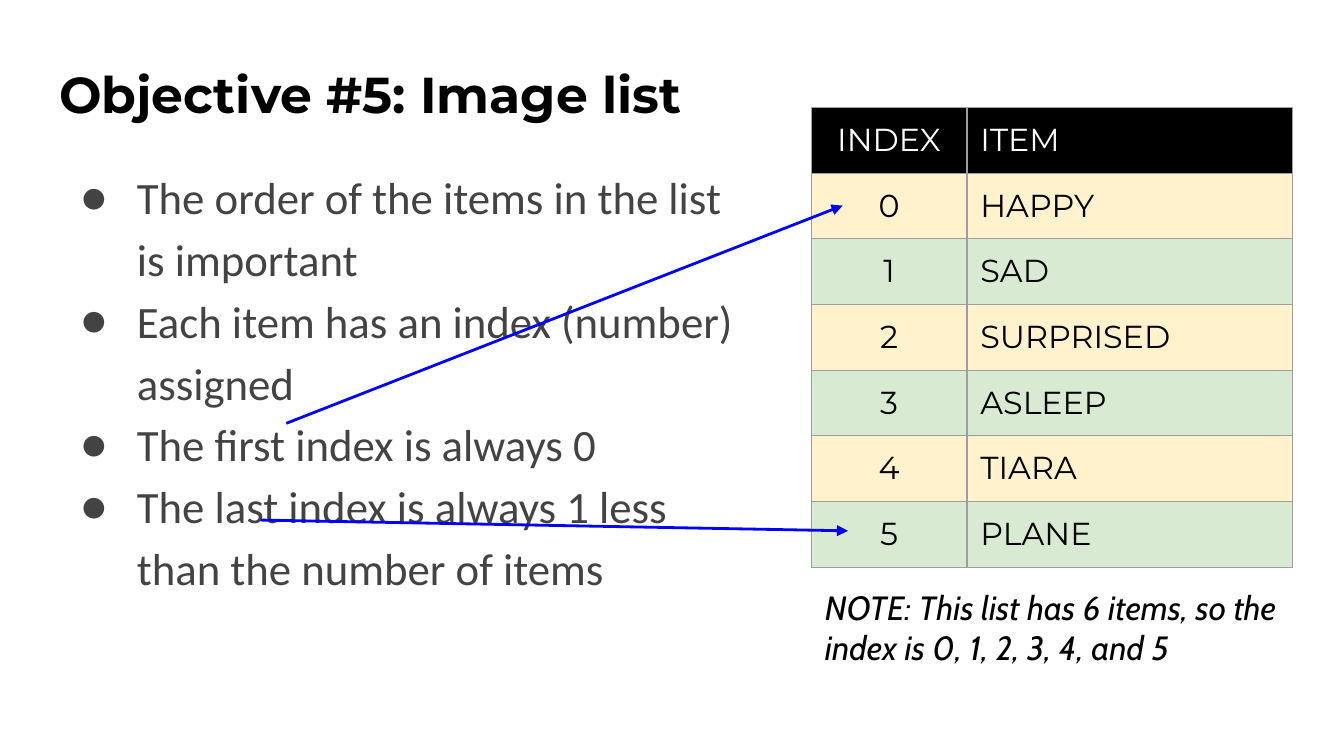
from lxml.etree import SubElement, fromstring
from pptx import Presentation
from pptx.dml.color import RGBColor
from pptx.enum.shapes import MSO_CONNECTOR
from pptx.enum.text import MSO_ANCHOR, MSO_AUTO_SIZE, PP_ALIGN
from pptx.oxml.ns import nsdecls, qn
from pptx.util import Inches, Pt


def hue(code):
    return RGBColor.from_string(code)


def write(frame, lines, font, size, color="000000", bold=False, italic=False,
          align=PP_ALIGN.LEFT, space=1.0, bullet=None):
    """Fill a text frame with one paragraph per line."""
    frame.word_wrap = True
    for i, line in enumerate(lines):
        para = frame.paragraphs[0] if i == 0 else frame.add_paragraph()
        para.alignment, para.line_spacing = align, space
        para.space_before = para.space_after = Pt(0)
        if bullet:
            props = para._p.get_or_add_pPr()
            props.set("marL", str(Inches(0.5)))
            props.set("indent", str(Inches(-0.42)))
            tint = SubElement(props, qn("a:buClr"))
            SubElement(tint, qn("a:srgbClr"), val=color)
            SubElement(props, qn("a:buFont"), typeface=font)
            SubElement(props, qn("a:buChar"), char=bullet)
        run = para.add_run()
        run.text = line
        run.font.name, run.font.size = font, Pt(size)
        run.font.bold, run.font.italic = bold, italic
        run.font.color.rgb = hue(color)


# Slide: 16 to 9, on a grid of 100 columns with rows of the same size
deck = Presentation()
deck.slide_width = Inches(10)
deck.slide_height = deck.slide_width * 9 // 16
slide = deck.slides.add_slide(deck.slide_layouts[5])
shapes = slide.shapes
unit = deck.slide_width // 100
pad = unit

# Title, bullet list and note
title = shapes.title
body = shapes.add_textbox(0, 0, unit, unit)
note = shapes.add_textbox(0, 0, unit, unit)
places = [
    (title, 3.4, 3.7, 93.2, 6.8),
    (body, 4.2, 11.05, 52.5, 41.6),
    (note, 60.4, 42.65, 39.3, 5.7),
]
for box, *place in places:
    box.left, box.top, box.width, box.height = [int(n * unit) for n in place]
    frame = box.text_frame
    frame.auto_size = MSO_AUTO_SIZE.NONE
    frame.vertical_anchor = MSO_ANCHOR.TOP
    frame.margin_left = frame.margin_right = pad
    frame.margin_top = frame.margin_bottom = pad

write(title.text_frame, ["Objective #5: Image list"], "Montserrat", 27, bold=True)
write(body.text_frame, [
    "The order of the items in the list is important",
    "Each item has an index (number) assigned",
    "The first index is always 0",
    "The last index is always 1 less than the number of items",
], "Calibri", 24, color="434343", space=1.15, bullet="●")
write(note.text_frame,
      ["NOTE: This list has 6 items, so the index is 0, 1, 2, 3, 4, and 5"],
      "Cabin", 18, italic=True)

# Index table
items = ["HAPPY", "SAD", "SURPRISED", "ASLEEP", "TIARA", "PLANE"]
rows = [("INDEX", "ITEM")] + [(str(i), item) for i, item in enumerate(items)]
place = [int(n * unit) for n in (60.35, 8, 35.8, 31.5)]
table = shapes.add_table(len(rows), 2, *place).table
table.first_row = table.horz_banding = False
for column, width in zip(table.columns, (11.6, 24.2)):
    column.width = int(width * unit)
for r, row in enumerate(rows):
    fill = "000000" if r == 0 else ("D9EAD3", "FFF2CC")[r % 2]
    for c, text in enumerate(row):
        cell = table.cell(r, c)
        cell.margin_left = cell.margin_right = pad
        cell.margin_top = cell.margin_bottom = pad
        cell.fill.solid()
        cell.fill.fore_color.rgb = hue(fill)
        write(cell.text_frame, [text], "Montserrat", 17,
              color="FFFFFF" if r == 0 else "000000",
              align=PP_ALIGN.LEFT if c else PP_ALIGN.CENTER)
        for i, side in enumerate("LRTB"):
            edge = fromstring(
                f'<a:ln{side} {nsdecls("a")} w="{Pt(0.75)}"><a:solidFill>'
                f'<a:srgbClr val="9E9E9E"/></a:solidFill></a:ln{side}>')
            cell._tc.get_or_add_tcPr().insert(i, edge)

# Arrows from the list to the first and last index
for ends in [(21.3, 31.5, 62.7, 15.3), (19.4, 38.7, 63.1, 39.5)]:
    arrow = shapes.add_connector(MSO_CONNECTOR.STRAIGHT,
                                 *[int(n * unit) for n in ends])
    arrow.line.color.rgb = hue("0000FF")
    arrow.line.width = Pt(1.5)
    SubElement(arrow.line._get_or_add_ln(), qn("a:tailEnd"), type="triangle")
    SubElement(arrow._element.spPr, qn("a:effectLst"))

# Bring the note to the front
shapes._spTree.append(note._element)

deck.save("out.pptx")
